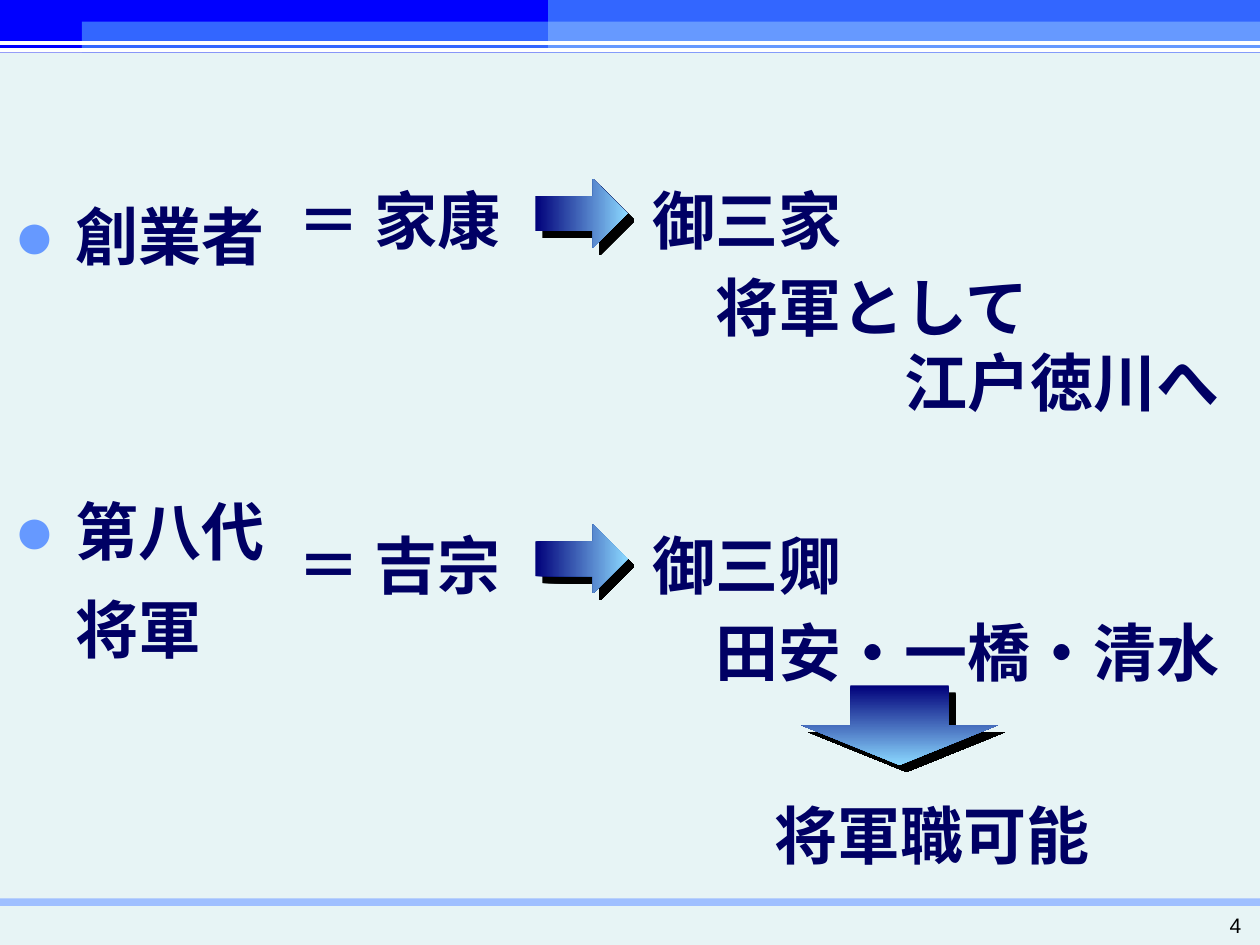
from lxml import etree
from pptx import Presentation
from pptx.dml.color import RGBColor
from pptx.enum.shapes import MSO_CONNECTOR, MSO_SHAPE
from pptx.enum.text import MSO_ANCHOR, PP_ALIGN
from pptx.oxml.ns import qn
from pptx.util import Pt

BACKGROUND = RGBColor(0xE7, 0xF4, 0xF5)
NAVY = RGBColor(0x00, 0x00, 0x64)
BLUE = RGBColor(0x00, 0x00, 0xFF)
MID_BLUE = RGBColor(0x33, 0x66, 0xFF)
LIGHT_BLUE = RGBColor(0x66, 0x99, 0xFF)
PALE_BLUE = RGBColor(0x9F, 0xBF, 0xFF)
ARROW_DARK = RGBColor(0x00, 0x00, 0x7A)
ARROW_LIGHT = RGBColor(0x8B, 0xD8, 0xFF)
WHITE = RGBColor(0xFF, 0xFF, 0xFF)
BLACK = RGBColor(0x00, 0x00, 0x00)

HEADING = {"name": "Noto Sans CJK JP", "size": Pt(36), "bold": True}
NUMBER = {"name": "Arial", "size": Pt(12), "bold": False}


def add_xml(parent, tag, **values):
    element = etree.SubElement(parent, qn(tag))
    for key, value in values.items():
        element.set(key, str(value))
    return element


class SlideBuilder:
    def __init__(self, slide):
        self.slide = slide
        fill = slide.background.fill
        fill.solid()
        fill.fore_color.rgb = BACKGROUND

    def shape(self, preset, left, top, width, height):
        shape = self.slide.shapes.add_shape(
            preset, Pt(left), Pt(top), Pt(width), Pt(height))
        shape.shadow.inherit = False
        shape.line.fill.background()
        return shape

    def band(self, left, top, width, height, color):
        band = self.shape(MSO_SHAPE.RECTANGLE, left, top, width, height)
        band.fill.solid()
        band.fill.fore_color.rgb = color

    def rule(self, y):
        rule = self.slide.shapes.add_connector(
            MSO_CONNECTOR.STRAIGHT, 0, Pt(y), Pt(720), Pt(y))
        rule.line.color.rgb = WHITE
        rule.line.width = Pt(2.25)
        add_xml(rule._element.spPr, "a:effectLst")

    def arrow(self, preset, left, top, width, height, angle):
        arrow = self.shape(preset, left, top, width, height)
        arrow.fill.gradient()
        arrow.fill.gradient_angle = angle
        stops = zip(arrow.fill.gradient_stops, (0, 1), (ARROW_DARK, ARROW_LIGHT))
        for stop, position, color in stops:
            stop.position = position
            stop.color.rgb = color
        effects = arrow._element.spPr.find(qn("a:effectLst"))
        shadow = add_xml(effects, "a:outerShdw", blurRad=0, dist=Pt(5.7),
                         dir=45 * 60000, algn="ctr", rotWithShape=0)
        add_xml(shadow, "a:srgbClr", val=BLACK)

    def text(self, left, top, width, height, *lines, font=HEADING, color=NAVY,
             frame_format=None, paragraph_format=None):
        box = self.slide.shapes.add_textbox(
            Pt(left), Pt(top), Pt(width), Pt(height))
        frame = box.text_frame
        for key, value in {"word_wrap": True, **(frame_format or {})}.items():
            setattr(frame, key, value)
        for index, line in enumerate(lines):
            paragraph = frame.add_paragraph() if index else frame.paragraphs[0]
            paragraph.text = line
            for key, value in (paragraph_format or {}).items():
                setattr(paragraph, key, value)
            for run in paragraph.runs:
                for key, value in font.items():
                    setattr(run.font, key, value)
                run.font.color.rgb = color
                add_xml(run._r.get_or_add_rPr(), "a:ea", typeface=font["name"])
        return frame

    def bullet(self, left, top, width, height, label, spacing):
        frame = self.text(left, top, width, height, label, paragraph_format={
            "line_spacing": spacing, "space_before": Pt(7.2)})
        properties = frame.paragraphs[0]._p.get_or_add_pPr()
        properties.set("marL", str(Pt(35.3)))
        properties.set("indent", str(Pt(-35.3)))
        bullet_color = add_xml(properties, "a:buClr")
        add_xml(bullet_color, "a:srgbClr", val=LIGHT_BLUE)
        add_xml(properties, "a:buSzPct", val=110000)
        add_xml(properties, "a:buFont", typeface="Arial")
        add_xml(properties, "a:buChar", char="●")


def main():
    deck = Presentation()
    deck.slide_width, deck.slide_height = Pt(720), Pt(540)
    page = SlideBuilder(deck.slides.add_slide(deck.slide_layouts[6]))

    # Footer and header bands
    for band in (
        (0, 513.4, 720, 4.3, PALE_BLUE),
        (0, 0, 720, 30, BLUE),
        (46.8, 12.4, 266.4, 17.4, MID_BLUE),
        (313.2, 0, 406.8, 14.4, MID_BLUE),
        (313.2, 12.4, 406.8, 17.6, LIGHT_BLUE),
    ):
        page.band(*band)
    for y in (28.8, 24.5):
        page.rule(y)
    page.text(676.8, 519.8, 39.6, 17.3, "4", font=NUMBER, color=BLACK,
              frame_format={"vertical_anchor": MSO_ANCHOR.MIDDLE},
              paragraph_format={"alignment": PP_ALIGN.RIGHT})

    # Role labels
    page.bullet(0.7, 87.8, 215.3, 73.4, "創業者", 1.5)
    page.bullet(0.7, 265, 215.3, 118.8, "第八代\v将軍", 1.3)

    # Shogun, arrow and the branch houses he founded
    for top, shogun, houses in ((100.1, "＝ 家康", "御三家"),
                                (297.4, "＝ 吉宗", "御三卿")):
        page.text(162.7, top, 181.4, 51.1, shogun)
        page.arrow(MSO_SHAPE.RIGHT_ARROW, 306, top + 2.1, 52.6, 39.6, 0)
        page.text(365.8, top, 181.4, 51.1, houses)

    # What the houses were for
    purpose = page.text(401.8, 149.8, 355.7, 94.3, "将軍として", "江戸徳川へ")
    purpose.paragraphs[1]._p.get_or_add_pPr().set("marL", str(Pt(108)))
    page.text(401.8, 347, 355.7, 51.1, "田安・一橋・清水")
    page.arrow(MSO_SHAPE.DOWN_ARROW, 457.9, 391.7, 112.3, 45.4, 270)
    page.text(435.6, 451.4, 196.6, 51.1, "将軍職可能")

    deck.save("out.pptx")


if __name__ == "__main__":
    main()
